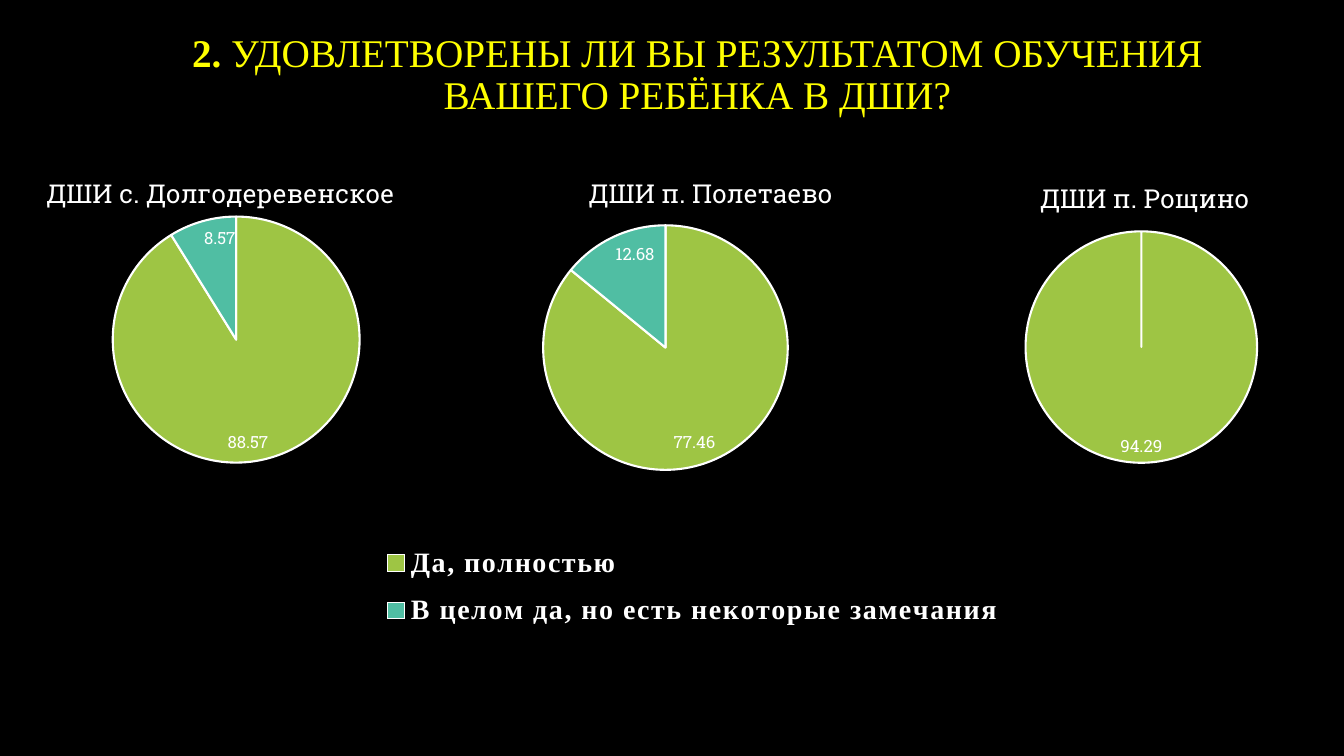
"""Build a survey slide with three pie charts and one shared legend."""
from dataclasses import dataclass

from lxml.etree import SubElement
from pptx import Presentation
from pptx.chart.data import CategoryChartData
from pptx.dml.color import RGBColor
from pptx.enum.chart import XL_CHART_TYPE, XL_LABEL_POSITION, XL_LEGEND_POSITION
from pptx.enum.text import MSO_ANCHOR, PP_ALIGN
from pptx.oxml import parse_xml
from pptx.oxml.ns import nsdecls, qn
from pptx.util import Inches, Pt


@dataclass(frozen=True)
class Theme:
    back: str = "000000"
    text: str = "FFFFFF"
    head: str = "FFFF00"
    slices: tuple = ("9EC544", "50BEA3")
    slab: str = "Roboto Slab"
    serif: str = "Times New Roman"
    head_size: float = 28
    name_size: float = 18.6
    key_size: float = 20
    label_size: float = 12
    base_size: float = 10


def style(font, face, size, color, bold=False):
    font.name, font.size, font.bold = face, Pt(size), bold
    font.color.rgb = RGBColor.from_string(color)


def write(para, text, **form):
    run = para.add_run()
    run.text = text
    style(run.font, **form)


def place(node, index, inner=False, **box):
    for old in node.findall(qn("c:layout")):
        node.remove(old)
    layout = parse_xml(f"<c:layout {nsdecls('c')}><c:manualLayout/></c:layout>")
    manual = layout[0]
    if inner:
        SubElement(manual, qn("c:layoutTarget")).set("val", "inner")
    for side in ("x", "y"):
        SubElement(manual, qn(f"c:{side}Mode")).set("val", "edge")
    for side, value in box.items():
        SubElement(manual, qn(f"c:{side}")).set("val", str(value))
    node.insert(index, layout)


class Board:
    def __init__(self, deck, theme):
        self.theme = theme
        self.slide = deck.slides.add_slide(deck.slide_layouts[6])
        fill = self.slide.background.fill
        fill.solid()
        fill.fore_color.rgb = RGBColor.from_string(theme.back)

    def title(self, mark, text, box):
        look = self.theme
        frame = self.slide.shapes.add_textbox(*map(Inches, box)).text_frame
        frame.word_wrap = True
        frame.vertical_anchor = MSO_ANCHOR.MIDDLE
        para = frame.paragraphs[0]
        para.alignment, para.line_spacing = PP_ALIGN.CENTER, 0.9
        form = dict(face=look.serif, size=look.head_size, color=look.head)
        write(para, mark, bold=True, **form)
        write(para, text, **form)

    def pie(self, name, values, box, spot, plot, names=("1", "2")):
        look = self.theme
        data = CategoryChartData()
        data.categories = names
        data.add_series("Series 1", values)
        chart = self.slide.shapes.add_chart(
            XL_CHART_TYPE.PIE, *map(Inches, box), data).chart
        style(chart.font, look.slab, look.base_size, look.text)
        chart.has_legend = False
        chart.has_title = True
        head = chart.chart_title
        head.include_in_layout = False
        write(head.text_frame.paragraphs[0], name, face=look.slab,
              size=look.name_size, color=look.text)
        place(head._element, 1, **dict(zip("xy", spot)))
        place(chart._chartSpace.chart.plotArea, 0, inner=True,
              **dict(zip("xywh", plot)))
        self.paint(chart.plots[0])
        return chart

    def paint(self, plot):
        look = self.theme
        plot.vary_by_categories = True
        series = plot.series[0]
        for index, color in enumerate(look.slices):
            form = series.points[index].format
            form.fill.solid()
            form.fill.fore_color.rgb = RGBColor.from_string(color)
            form.line.color.rgb = RGBColor.from_string(look.text)
            form.line.width = Pt(1.5)
        labels = series.data_labels
        labels.show_value = True
        labels.position = XL_LABEL_POSITION.INSIDE_END
        labels.number_format, labels.number_format_is_linked = "0.00;;", False
        style(labels.font, look.slab, look.label_size, look.text)

    def legend(self, chart, box):
        look = self.theme
        chart.has_legend = True
        key = chart.legend
        key.position = XL_LEGEND_POSITION.BOTTOM
        key.include_in_layout = False
        style(key.font, look.serif, look.key_size, look.text, bold=True)
        for run in key._element.iter(qn("a:defRPr")):
            run.set("spc", "100")
        place(key._element, 1, **dict(zip("xywh", box)))


def main():
    deck = Presentation()
    deck.slide_width, deck.slide_height = Inches(13.33), Inches(7.5)
    board = Board(deck, Theme())
    board.pie("ДШИ с. Долгодеревенское", (88.57, 8.57), (-0.2, 1.48, 4.71, 3.12),
              (0.13, 0.06), (0.08, 0.215, 0.92, 0.785))
    board.title("2. ", "УДОВЛЕТВОРЕНЫ ЛИ ВЫ РЕЗУЛЬТАТОМ ОБУЧЕНИЯ ВАШЕГО РЕБЁНКА В ДШИ?",
                (1.51, 0.33, 10.81, 0.84))
    shared = board.pie(
        "ДШИ п. Полетаево", (77.46, 12.68), (3.5, 1.62, 6.74, 5.46),
        (0.34, 0.01), (0.28, 0.11, 0.36, 0.45),
        ("Да, полностью", "В целом да, но есть некоторые замечания"))
    board.legend(shared, (0.03, 0.67, 0.94, 0.2))
    board.pie("ДШИ п. Рощино", (94.29, 0), (9.3, 1.53, 4.04, 3.19),
              (0.24, 0.06), (0.21, 0.24, 0.58, 0.72))
    deck.save("out.pptx")


if __name__ == "__main__":
    main()
